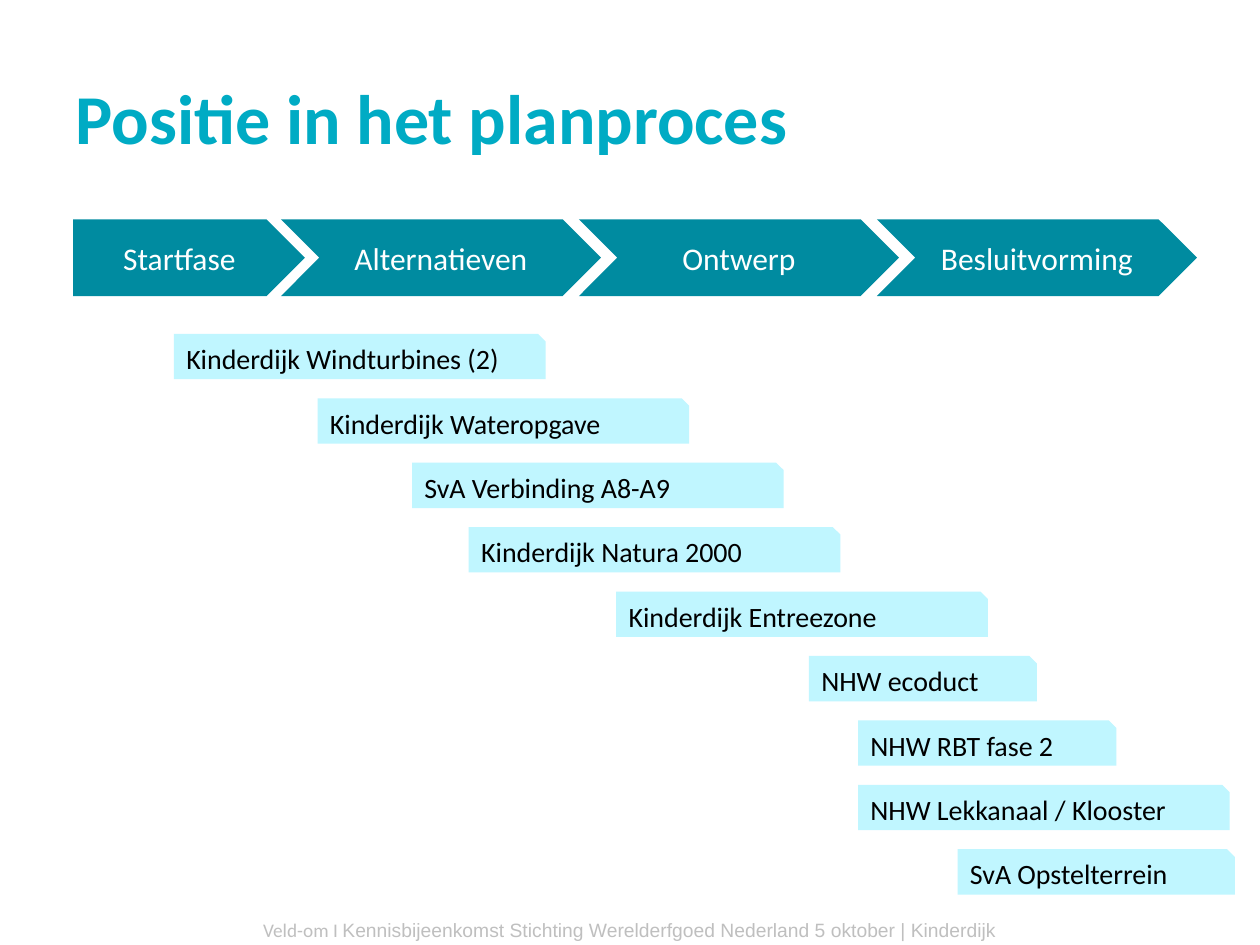
"""Build the slide that places projects along the phases of the planning process."""
from pptx import Presentation
from pptx.dml.color import RGBColor
from pptx.enum.shapes import MSO_SHAPE
from pptx.enum.text import MSO_ANCHOR, MSO_AUTO_SIZE, PP_ALIGN
from pptx.util import Inches, Pt

TITLE = "Positie in het planproces"
PHASES = ["Startfase", "Alternatieven", "Ontwerp", "Besluitvorming"]
PROJECTS = [
    ("Kinderdijk Windturbines (2)", 1.38, 2.95),
    ("Kinderdijk Wateropgave", 2.52, 2.95),
    ("SvA Verbinding A8-A9", 3.27, 2.95),
    ("Kinderdijk Natura 2000", 3.72, 2.95),
    ("Kinderdijk Entreezone", 4.89, 2.95),
    ("NHW ecoduct", 6.42, 1.81),
    ("NHW RBT fase 2", 6.81, 2.05),
    ("NHW Lekkanaal / Klooster", 6.81, 2.95),
    ("SvA Opstelterrein", 7.6, 2.2),
]
FOOTER = [
    ("Veld-om I ", "Calibri"),
    ("Kennisbijeenkomst Stichting Werelderfgoed Nederland 5 oktober | Kinderdijk", "Arial"),
]
THEME = {
    "font": "Calibri",
    "title": ("00ABC4", 40),
    "phase": ("FFFFFF", 18),
    "project": ("000000", 16),
    "footer": ("BFBFBF", 11),
    "arrow": "008BA0",
    "bar": "C0F6FF",
}


def style(font, role):
    color, size = THEME[role]
    font.size = Pt(size)
    font.color.rgb = RGBColor.from_string(color)


def write(shape, text, role, align):
    frame = shape.text_frame
    frame.word_wrap = True
    frame.vertical_anchor = MSO_ANCHOR.MIDDLE
    para = frame.paragraphs[0]
    para.text = text
    para.alignment = align
    para.font.name = THEME["font"]
    style(para.font, role)
    return para


def place(shape, *box):
    shape.left, shape.top, shape.width, shape.height = map(Inches, box)


def block(shapes, kind, box, fill):
    shape = shapes.add_shape(kind, *map(Inches, box))
    shape.shadow.inherit = False
    shape.fill.solid()
    shape.fill.fore_color.rgb = RGBColor.from_string(THEME[fill])
    shape.line.fill.background()
    return shape


def add_phases(slide):
    group = slide.shapes.add_group_shape()
    for i, name in enumerate(PHASES):
        if i == 0:
            kind, left, width = MSO_SHAPE.PENTAGON, 0.58, 1.84
        else:
            kind, left, width = MSO_SHAPE.CHEVRON, 2.23 + 2.365 * (i - 1), 2.54
        arrow = block(group.shapes, kind, (left, 1.74, width, 0.61), "arrow")
        write(arrow, name, "phase", PP_ALIGN.CENTER)


def add_projects(slide):
    first, last = 2.65, 6.74
    step = (last - first) / (len(PROJECTS) - 1)
    for i, (name, left, width) in enumerate(PROJECTS):
        box = (left, first + i * step, width, 0.36)
        bar = block(slide.shapes, MSO_SHAPE.SNIP_1_RECTANGLE, box, "bar")
        write(bar, name, "project", PP_ALIGN.LEFT)


def add_footer(slide):
    box = slide.shapes.add_textbox(*map(Inches, (0, 7.24, 10, 0.29)))
    frame = box.text_frame
    frame.word_wrap = True
    frame.auto_size = MSO_AUTO_SIZE.SHAPE_TO_FIT_TEXT
    para = frame.paragraphs[0]
    para.alignment = PP_ALIGN.CENTER
    style(para.font, "footer")
    for text, font in FOOTER:
        run = para.add_run()
        run.text = text
        run.font.name = font
        style(run.font, "footer")


def main():
    deck = Presentation()
    deck.slide_width, deck.slide_height = Inches(10), Inches(7.5)
    slide = deck.slides.add_slide(deck.slide_layouts[5])
    title = slide.shapes.title
    place(title, 0.5, 0.3, 9, 1.25)
    write(title, TITLE, "title", PP_ALIGN.LEFT).font.bold = True
    add_phases(slide)
    add_projects(slide)
    add_footer(slide)
    deck.save("out.pptx")


if __name__ == "__main__":
    main()
